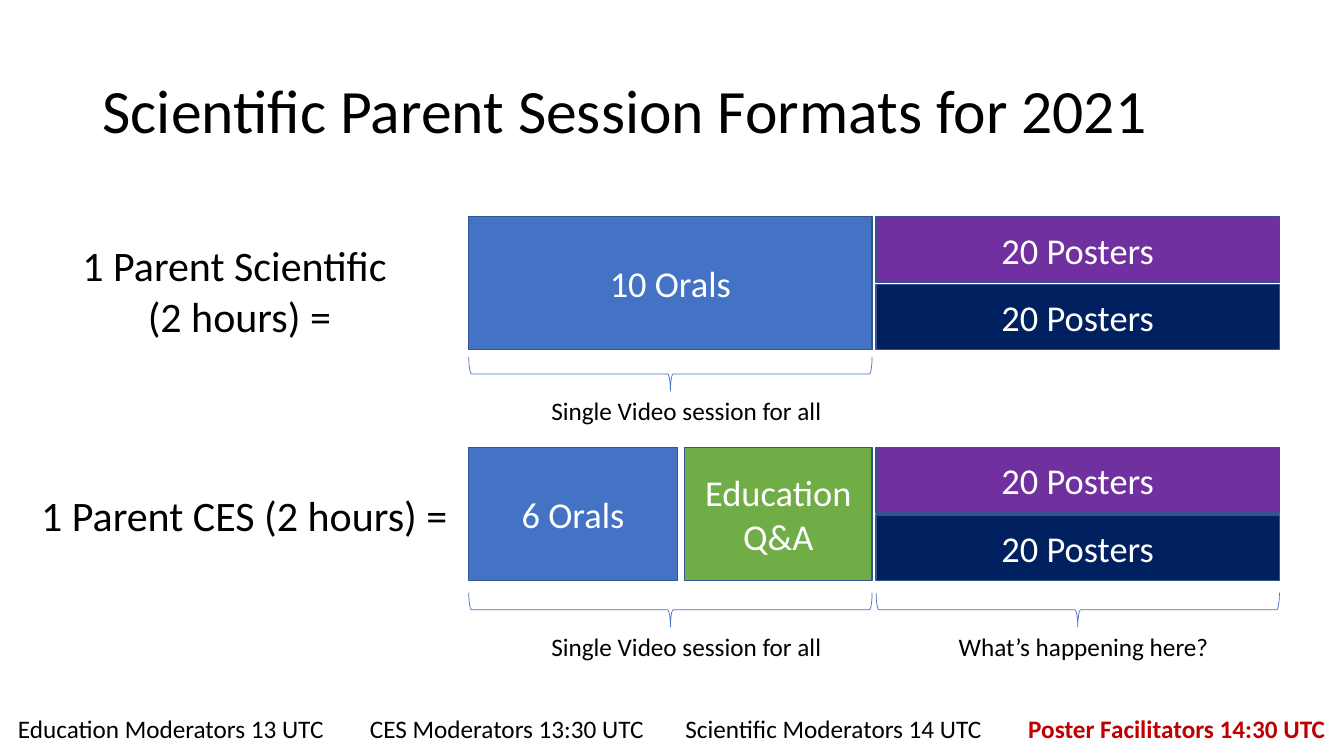
from dataclasses import dataclass

from pptx import Presentation
from pptx import util as u
from pptx.dml import color
from pptx.enum import shapes, text

FONT = "Calibri"
COLORS = {
    "black": "000000",
    "white": "FFFFFF",
    "blue": "4472C4",
    "outline": "325491",
    "purple": "7030A0",
    "navy": "002060",
    "green": "70AD47",
    "red": "C00000",
}

SESSION_LEFT, POSTER_LEFT = 4.65, 8.69
HALF_WIDTH = 4
ROW_TOPS = (2.15, 4.44)
ROW_HEIGHT = 1.32
POSTER_HEIGHT = 0.65
BRACE_DEPTH = 0.34
FOOTER_TOP = 7.03


@dataclass
class Block:
    left: float
    top: float
    width: float
    height: float
    lines: tuple[str, ...]
    fill: str


@dataclass
class Label:
    left: float
    top: float
    width: float
    height: float
    lines: tuple[str, ...]
    size: float = 18
    color: str = "black"
    bold: bool = False
    centered: bool = False
    wrap: bool = False
    middle: bool = False
    spacing: float = 1.0


@dataclass
class Brace:
    left: float
    top: float
    caption: str
    caption_top: float
    caption_width: float


def rgb(name: str) -> color.RGBColor:
    return color.RGBColor.from_string(COLORS[name])


def write_lines(frame, lines: tuple[str, ...], size: float, color_name: str,
                bold: bool = False, centered: bool = False, spacing: float = 1.0) -> None:
    for index, line in enumerate(lines):
        paragraph = frame.paragraphs[0] if index == 0 else frame.add_paragraph()
        paragraph.alignment = text.PP_ALIGN.CENTER if centered else text.PP_ALIGN.LEFT
        paragraph.line_spacing = spacing
        run = paragraph.add_run()
        run.text = line
        run.font.name = FONT
        run.font.size = u.Pt(size)
        run.font.bold = bold
        run.font.color.rgb = rgb(color_name)


def draw_block(slide, block: Block) -> None:
    shape = slide.shapes.add_shape(
        shapes.MSO_SHAPE.RECTANGLE, u.Inches(block.left), u.Inches(block.top),
        u.Inches(block.width), u.Inches(block.height))
    shape.shadow.inherit = False
    shape.fill.solid()
    shape.fill.fore_color.rgb = rgb(block.fill)
    shape.line.color.rgb = rgb("outline")
    shape.line.width = u.Pt(1)
    shape.text_frame.word_wrap = True
    shape.text_frame.vertical_anchor = text.MSO_ANCHOR.MIDDLE
    write_lines(shape.text_frame, block.lines, 26, "white", centered=True)


def draw_label(slide, label: Label) -> None:
    box = slide.shapes.add_textbox(
        u.Inches(label.left), u.Inches(label.top),
        u.Inches(label.width), u.Inches(label.height))
    frame = box.text_frame
    frame.word_wrap = label.wrap
    frame.vertical_anchor = text.MSO_ANCHOR.MIDDLE if label.middle else text.MSO_ANCHOR.TOP
    write_lines(frame, label.lines, label.size, label.color,
                label.bold, label.centered, label.spacing)


def draw_brace(slide, brace: Brace) -> None:
    inset = (HALF_WIDTH - BRACE_DEPTH) / 2
    shape = slide.shapes.add_shape(
        shapes.MSO_SHAPE.LEFT_BRACE, u.Inches(brace.left + inset),
        u.Inches(brace.top - inset), u.Inches(BRACE_DEPTH), u.Inches(HALF_WIDTH))
    shape.rotation = 270
    shape.shadow.inherit = False
    shape.fill.background()
    shape.line.color.rgb = rgb("blue")
    shape.line.width = u.Pt(0.5)
    draw_label(slide, Label(brace.left + 0.72, brace.caption_top,
                            brace.caption_width, 0.4, (brace.caption,)))


def main() -> None:
    presentation = Presentation()
    presentation.slide_width = u.Inches(13.33)
    presentation.slide_height = u.Inches(7.5)
    slide = presentation.slides.add_slide(presentation.slide_layouts[6])

    scientific_top, ces_top = ROW_TOPS
    blocks = [
        Block(SESSION_LEFT, scientific_top, HALF_WIDTH, ROW_HEIGHT, ("10 Orals",), "blue"),
        Block(SESSION_LEFT, ces_top, 2.07, ROW_HEIGHT, ("6 Orals",), "blue"),
        Block(6.79, ces_top, 1.86, ROW_HEIGHT, ("Education", "Q&A"), "green"),
    ]
    for row_top in ROW_TOPS:
        lower_top = row_top + ROW_HEIGHT - POSTER_HEIGHT
        for top, fill in ((row_top, "purple"), (lower_top, "navy")):
            blocks.append(Block(POSTER_LEFT, top, HALF_WIDTH, POSTER_HEIGHT,
                                ("20 Posters",), fill))

    labels = [
        Label(0.92, 0.4, 11.5, 1.45, ("Scientific Parent Session Formats for 2021",),
              size=44, wrap=True, middle=True, spacing=0.9),
        Label(0.7, 2.33, 3.35, 1.11, ("1 Parent Scientific ", "(2 hours) ="),
              size=30, centered=True),
        Label(0.31, 4.81, 4.27, 0.61, ("1 Parent CES (2 hours) =",), size=30),
        Label(0.08, FOOTER_TOP, 3.31, 0.4, ("Education Moderators 13 UTC",)),
        Label(3.57, FOOTER_TOP, 2.95, 0.4, ("CES Moderators 13:30 UTC",)),
        Label(6.7, FOOTER_TOP, 3.23, 0.4, ("Scientific Moderators 14 UTC",)),
        Label(10.1, FOOTER_TOP, 3.17, 0.4, ("Poster Facilitators 14:30 UTC",),
              color="red", bold=True),
    ]
    braces = [
        Brace(SESSION_LEFT, 3.54, "Single Video session for all", 3.87, 2.9),
        Brace(SESSION_LEFT, 5.88, "Single Video session for all", 6.21, 2.9),
        Brace(POSTER_LEFT, 5.88, "What’s happening here?", 6.21, 2.71),
    ]

    for block in blocks:
        draw_block(slide, block)
    for label in labels:
        draw_label(slide, label)
    for brace in braces:
        draw_brace(slide, brace)

    presentation.save("out.pptx")


if __name__ == "__main__":
    main()
